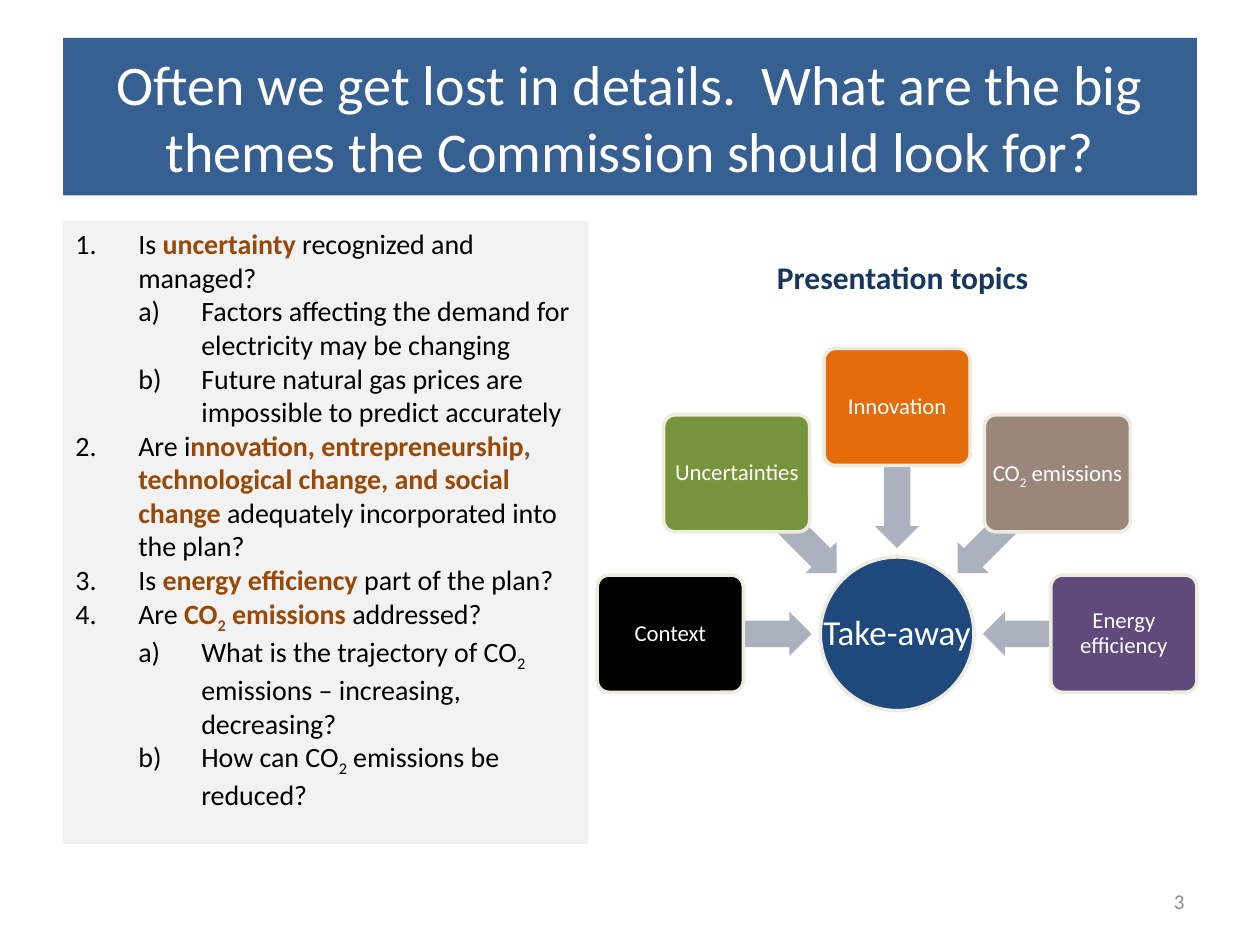
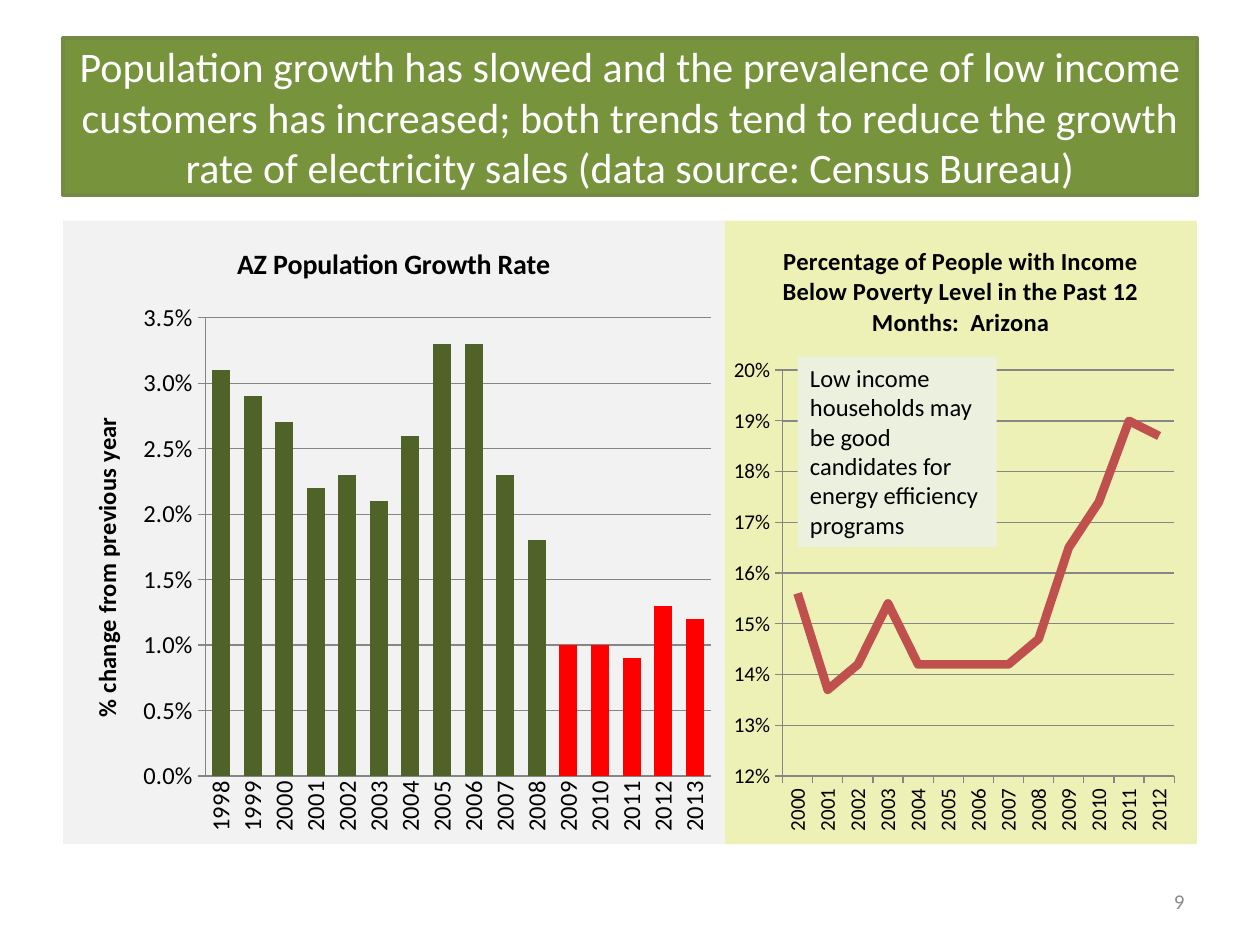
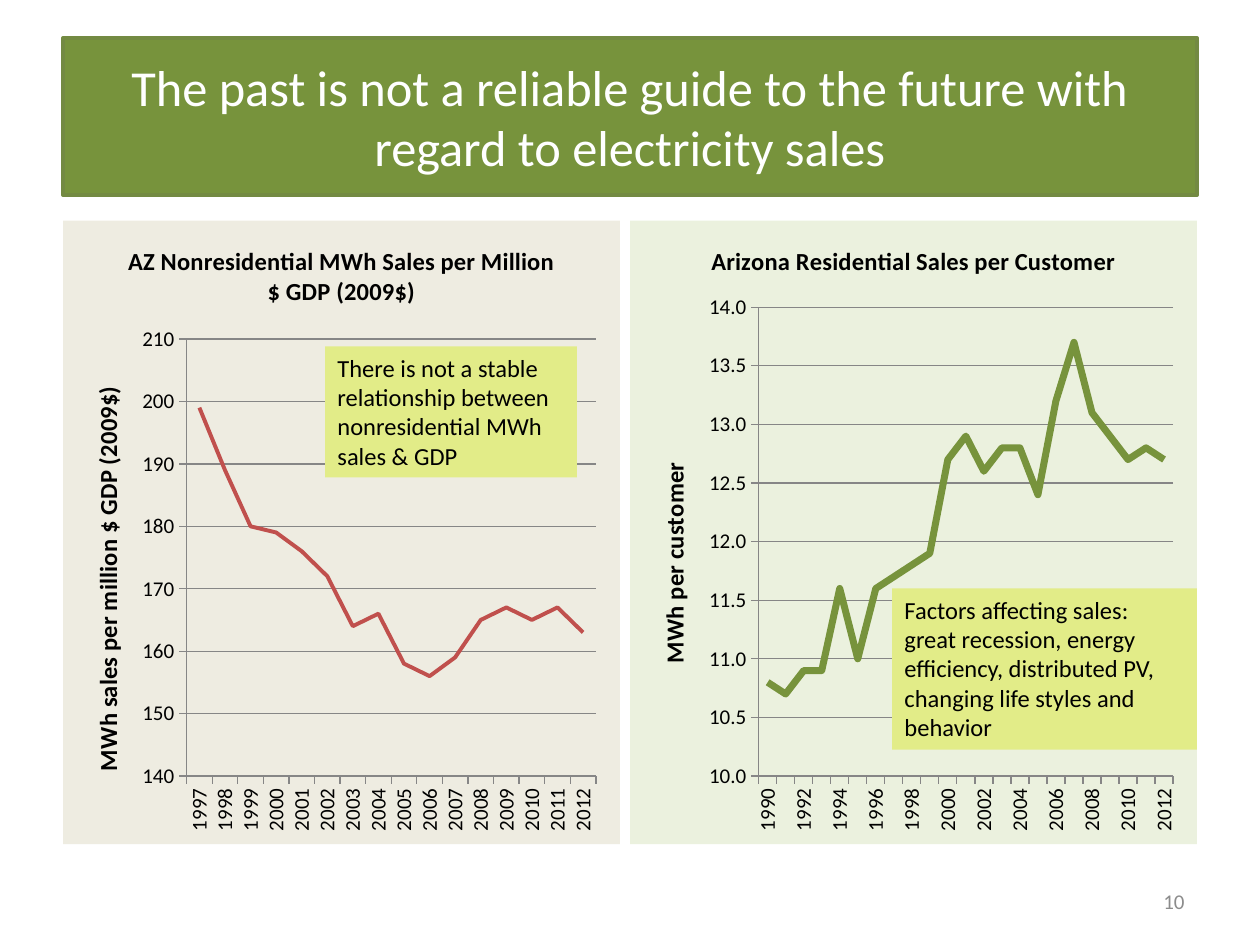
import math
from dataclasses import dataclass

import pptx
import pptx.chart.data
import pptx.dml.color
import pptx.enum.chart
import pptx.enum.shapes
import pptx.enum.text
import pptx.oxml
import pptx.oxml.ns
import pptx.util

Inches = pptx.util.Inches
Pt = pptx.util.Pt
SHAPES = pptx.enum.shapes.MSO_SHAPE
ALIGN = pptx.enum.text.PP_ALIGN
ANCHOR = pptx.enum.text.MSO_ANCHOR
CHARTS = pptx.enum.chart.XL_CHART_TYPE
TICKS = pptx.enum.chart.XL_TICK_MARK


@dataclass(frozen=True)
class Theme:
    font: str = "Calibri"
    white: str = "FFFFFF"
    black: str = "000000"
    blue: str = "376092"
    navy: str = "1F497D"
    heading: str = "17375E"
    green: str = "77933C"
    green_edge: str = "738A42"
    dark_green: str = "4F6228"
    pale_green: str = "EBF1DE"
    pale_yellow: str = "EDF1B5"
    note: str = "E2EC88"
    panel: str = "F2F2F2"
    cream: str = "EEECE1"
    accent: str = "984807"
    orange: str = "E46C0A"
    taupe: str = "9A867A"
    purple: str = "604A7B"
    arrow: str = "ACB1BF"
    red: str = "FF0000"
    brick: str = "C0504D"
    axis: str = "868686"
    page_number: str = "8C8C8C"
    chart_text: int = 10
    small: int = 12
    node: int = 13
    label: int = 14
    body: int = 16
    subheading: int = 18
    hub: int = 20
    title_small: float = 24
    title_medium: float = 28.8
    title_large: float = 32


THEME = Theme()


def color(value):
    return pptx.dml.color.RGBColor.from_string(value)


def set_font(font, size, value, bold=False):
    font.name, font.size, font.bold = THEME.font, Pt(size), bold
    font.color.rgb = color(value)


def add_runs(paragraph, text):
    """Add runs to a paragraph: *...* is a bold accent, ~...~ a subscript."""
    for accent_index, chunk in enumerate(text.split("*")):
        for subscript_index, piece in enumerate(chunk.split("~")):
            if not piece:
                continue
            run = paragraph.add_run()
            run.text = piece
            if accent_index % 2:
                run.font.bold = True
                run.font.color.rgb = color(THEME.accent)
            if subscript_index % 2:
                run._r.get_or_add_rPr().set("baseline", "-25000")


def number_paragraph(paragraph, level):
    """Number a paragraph 1. at level 0 and a) at level 1."""
    paragraph.level = level
    properties = paragraph._p.get_or_add_pPr()
    properties.set("marL", str(Inches(0.5 * (level + 1))))
    properties.set("indent", str(-Inches(0.5)))
    scheme = ("arabicPeriod", "alphaLcParenR")[level]
    properties.append(pptx.oxml.parse_xml(
        f'<a:buAutoNum {pptx.oxml.ns.nsdecls("a")} type="{scheme}"/>'))


def place_plot(chart, frame, plot):
    """Fix the inner plot area; both boxes are in inches on the slide."""
    left, top, width, height = frame
    x, y, w, h = plot
    values = {"x": (x - left) / width, "y": (y - top) / height, "w": w / width, "h": h / height}
    sizes = "".join(f'<c:{key} val="{value:.3f}"/>' for key, value in values.items())
    area = chart.element.xpath(".//c:plotArea")[0]
    for layout in area.xpath("./c:layout"):
        area.remove(layout)
    area.insert(0, pptx.oxml.parse_xml(
        f'<c:layout {pptx.oxml.ns.nsdecls("c")}><c:manualLayout><c:layoutTarget val="inner"/>'
        f'<c:xMode val="edge"/><c:yMode val="edge"/>{sizes}</c:manualLayout></c:layout>'))


def fill_chart(chart, fill):
    chart.element.xpath("./c:txPr")[0].addprevious(pptx.oxml.parse_xml(
        f'<c:spPr {pptx.oxml.ns.nsdecls("c", "a")}><a:solidFill><a:srgbClr val="{fill}"/></a:solidFill>'
        '<a:ln><a:noFill/></a:ln></c:spPr>'))


def set_chart_title(title, text, size):
    title.text_frame.text = text
    set_font(title.text_frame.paragraphs[0].font, size, THEME.black, True)


class Deck:
    def __init__(self):
        self.presentation = pptx.Presentation()
        self.presentation.slide_width = Inches(10)
        self.presentation.slide_height = Inches(7.5)
        self.slide = None

    def start_slide(self, title, number, size, fill, edge=None):
        self.slide = self.presentation.slides.add_slide(self.presentation.slide_layouts[5])
        shape = self.slide.shapes.title
        shape.left, shape.top, shape.width, shape.height = map(Inches, (0.5, 0.3, 9, 1.25))
        self.paint(shape, fill, edge)
        shape.text_frame.auto_size = pptx.enum.text.MSO_AUTO_SIZE.NONE
        self.set_text(shape, [title], size, THEME.white, ALIGN.CENTER, ANCHOR.MIDDLE)
        self.text((7.17, 6.95, 2.33, 0.4), str(number), THEME.small, THEME.page_number,
                  ALIGN.RIGHT, ANCHOR.MIDDLE)

    def paint(self, shape, fill, edge=None):
        shape.fill.solid()
        shape.fill.fore_color.rgb = color(fill)
        if edge:
            shape.line.color.rgb = color(edge)
            shape.line.width = Pt(2)
        else:
            shape.line.fill.background()

    def set_text(self, shape, texts, size, value, align=ALIGN.LEFT, anchor=ANCHOR.TOP, bold=False, levels=None):
        frame = shape.text_frame
        frame.word_wrap = True
        frame.vertical_anchor = anchor
        for index, text in enumerate(texts):
            paragraph = frame.add_paragraph() if index else frame.paragraphs[0]
            if levels:
                number_paragraph(paragraph, levels[index])
            paragraph.alignment = align
            set_font(paragraph.font, size, value, bold)
            add_runs(paragraph, text)

    def text(self, box, text, size, value, align, anchor=ANCHOR.TOP, bold=False):
        shape = self.slide.shapes.add_textbox(*map(Inches, box))
        self.set_text(shape, [text], size, value, align, anchor, bold)

    def shape(self, kind, box, fill, edge=None):
        shape = self.slide.shapes.add_shape(kind, *map(Inches, box))
        shape.shadow.inherit = False
        self.paint(shape, fill, edge)
        return shape

    def note(self, box, text, fill):
        self.set_text(self.shape(SHAPES.RECTANGLE, box, fill), [text], THEME.label, THEME.black)

    def numbered_panel(self, box, items):
        levels, texts = zip(*items)
        panel = self.shape(SHAPES.RECTANGLE, box, THEME.panel)
        self.set_text(panel, texts, THEME.body, THEME.black, levels=levels)

    def node(self, kind, center, size, text, fill, font_size):
        (x, y), (width, height) = center, size
        shape = self.shape(kind, (x - width / 2, y - height / 2, width, height), fill, THEME.cream)
        frame = shape.text_frame
        frame.margin_left = frame.margin_right = frame.margin_top = frame.margin_bottom = Inches(0.01)
        self.set_text(shape, [text], font_size, THEME.white, ALIGN.CENTER, ANCHOR.MIDDLE)
        frame.paragraphs[0].line_spacing = 0.9
        return shape

    def converging_diagram(self, center, hub, topics):
        """Set topics on a half circle, each with an arrow to the hub."""
        def around(angle, radius):
            radians = math.radians(angle)
            return center[0] + radius * math.cos(radians), center[1] + radius * math.sin(radians)

        circle = self.node(SHAPES.OVAL, center, (1.22, 1.22), hub, THEME.navy, THEME.hub)
        circle.text_frame.word_wrap = False
        for index, (topic, fill) in enumerate(topics):
            angle = 180 + index * 180 / (len(topics) - 1)
            x, y = around(angle, 1.24)
            arrow = self.shape(SHAPES.LEFT_ARROW, (x - 0.56, y - 0.35 / 2, 1.12, 0.35), THEME.arrow)
            arrow.adjustments[0], arrow.adjustments[1] = 0.6, 0.5
            arrow.rotation = angle % 360
            box = self.node(SHAPES.ROUNDED_RECTANGLE, around(angle, 1.8), (1.16, 0.93),
                            topic, fill, THEME.node)
            box.adjustments[0] = 0.1

    def chart(self, kind, box, plot, title, years, values, scale, number_format, fill,
              title_size=THEME.label, axis_size=THEME.small, axis_title=None):
        """Add a one-series chart over years; scale is minimum, maximum, step."""
        data = pptx.chart.data.CategoryChartData()
        data.categories = [str(year) for year in years]
        data.add_series("Series 1", values)
        chart = self.slide.shapes.add_chart(kind, *map(Inches, box), data).chart
        chart.has_legend = False
        set_font(chart.font, THEME.chart_text, THEME.black)
        fill_chart(chart, fill)
        place_plot(chart, box, plot)
        set_chart_title(chart.chart_title, title, title_size)

        for axis in (chart.category_axis, chart.value_axis):
            set_font(axis.tick_labels.font, axis_size, THEME.black)
            axis.major_tick_mark, axis.minor_tick_mark = TICKS.OUTSIDE, TICKS.NONE
            axis.format.line.color.rgb = color(THEME.axis)
        chart.element.xpath(".//c:catAx/c:txPr/a:bodyPr")[0].set("rot", "-5400000")

        axis = chart.value_axis
        axis.minimum_scale, axis.maximum_scale, axis.major_unit = scale
        axis.tick_labels.number_format = number_format
        axis.tick_labels.number_format_is_linked = False
        axis.has_major_gridlines = True
        axis.major_gridlines.format.line.color.rgb = color(THEME.axis)
        if axis_title:
            set_chart_title(axis.axis_title, axis_title, THEME.label)
            chart.element.xpath(".//c:valAx/c:title//a:bodyPr")[0].set("rot", "-5400000")
        return chart

    def column_chart(self, *arguments, bar_color, highlights, highlight_color, **options):
        chart = self.chart(CHARTS.COLUMN_CLUSTERED, *arguments, **options)
        chart.category_axis.major_tick_mark = TICKS.NONE
        plot = chart.plots[0]
        plot.gap_width, plot.vary_by_categories = 75, False
        series = plot.series[0]
        bars = [(series, bar_color)] + [(series.points[index], highlight_color) for index in highlights]
        for bar, value in bars:
            bar.format.fill.solid()
            bar.format.fill.fore_color.rgb = color(value)

    def line_chart(self, *arguments, line_color, line_width, **options):
        chart = self.chart(CHARTS.LINE, *arguments, **options)
        chart.plots[0].vary_by_categories = False
        series = chart.plots[0].series[0]
        series.smooth = False
        series.marker.style = pptx.enum.chart.XL_MARKER_STYLE.NONE
        series.format.line.color.rgb = color(line_color)
        series.format.line.width = Pt(line_width)
        for crossing in chart.element.xpath(".//c:valAx/c:crossBetween"):
            crossing.set("val", "midCat")


def build_themes_slide(deck):
    deck.start_slide("Often we get lost in details.  What are the big themes the Commission should look for?",
                     3, THEME.title_large, THEME.blue)
    deck.numbered_panel((0.5, 1.75, 4.17, 4.95), [
        (0, "Is *uncertainty* recognized and managed?"),
        (1, "Factors affecting the demand for electricity may be changing"),
        (1, "Future natural gas prices are impossible to predict accurately"),
        (0, "Are i*nnovation, entrepreneurship, technological change, and social change*"
            " adequately incorporated into the plan?"),
        (0, "Is *energy efficiency *part of the plan?"),
        (0, "Are* CO~2~ emissions *addressed?"),
        (1, "What is the trajectory of CO~2~ emissions – increasing, decreasing?"),
        (1, "How can CO~2~ emissions be reduced?"),
    ])
    deck.converging_diagram((7.12, 5.03), "Take-away", [
        ("Context", THEME.black),
        ("Uncertainties", THEME.green),
        ("Innovation", THEME.orange),
        ("CO~2~ emissions", THEME.taupe),
        ("Energy efficiency", THEME.purple),
    ])
    deck.text((5.08, 2, 4.17, 0.42), "Presentation topics", THEME.subheading, THEME.heading,
              ALIGN.CENTER, bold=True)


def build_population_slide(deck):
    deck.start_slide("Population growth has slowed and the prevalence of low income customers has increased; "
                     "both trends tend to reduce the growth rate of electricity sales "
                     "(data source: Census Bureau)", 9, THEME.title_small, THEME.green, THEME.green_edge)
    deck.column_chart(
        (0.5, 1.75, 5.25, 4.95), (1.63, 2.52, 4.01, 3.64), "AZ Population Growth Rate", range(1998, 2014),
        [0.031, 0.029, 0.027, 0.022, 0.023, 0.021, 0.026, 0.033,
         0.033, 0.023, 0.018, 0.01, 0.01, 0.009, 0.013, 0.012],
        (0, 0.035, 0.005), "0.0%", THEME.panel, title_size=THEME.body, axis_size=THEME.label,
        axis_title="% change from previous year", bar_color=THEME.dark_green,
        highlights=range(11, 16), highlight_color=THEME.red)
    deck.line_chart(
        (5.75, 1.75, 3.75, 4.95), (6.21, 2.94, 3.11, 3.22),
        "Percentage of People with Income Below Poverty Level in the Past 12 Months:  Arizona",
        range(2000, 2013),
        [0.156, 0.137, 0.142, 0.154, 0.142, 0.142, 0.142, 0.142, 0.147, 0.165, 0.174, 0.19, 0.187],
        (0.12, 0.2, 0.01), "0%", THEME.pale_yellow, line_color=THEME.brick, line_width=5)
    deck.note((6.33, 2.83, 1.58, 1.51),
              "Low income households may be good candidates for energy efficiency programs", THEME.pale_green)


def build_sales_slide(deck):
    deck.start_slide("The past is not a reliable guide to the future with regard to electricity sales",
                     10, THEME.title_medium, THEME.green, THEME.green_edge)
    deck.line_chart(
        (5, 1.75, 4.5, 4.95), (6.02, 2.44, 3.29, 3.72), "Arizona Residential Sales per Customer",
        range(1990, 2013),
        [10.8, 10.7, 10.9, 10.9, 11.6, 11, 11.6, 11.7, 11.8, 11.9, 12.7, 12.9,
         12.6, 12.8, 12.8, 12.4, 13.2, 13.7, 13.1, 12.9, 12.7, 12.8, 12.7],
        (10, 14, 0.5), "#,##0.0", THEME.pale_green, axis_title="MWh per customer",
        line_color=THEME.green, line_width=4)
    deck.line_chart(
        (0.5, 1.75, 4.42, 4.95), (1.48, 2.69, 3.25, 3.47),
        "AZ Nonresidential MWh Sales per Million $ GDP (2009$)", range(1997, 2013),
        [199, 189, 180, 179, 176, 172, 164, 166, 158, 156, 159, 165, 167, 165, 167, 163],
        (140, 210, 10), "#,##0", THEME.cream, axis_title="MWh sales per million $ GDP (2009$)",
        line_color=THEME.brick, line_width=2.25)
    deck.note((7.08, 4.67, 2.42, 1.28),
              "Factors affecting sales:  great recession, energy efficiency, distributed PV, "
              "changing life styles and behavior", THEME.note)
    deck.note((2.58, 2.75, 2, 1.04),
              "There is not a stable relationship between nonresidential MWh sales & GDP", THEME.note)


def main():
    deck = Deck()
    build_themes_slide(deck)
    build_population_slide(deck)
    build_sales_slide(deck)
    deck.presentation.save("out.pptx")


if __name__ == "__main__":
    main()
